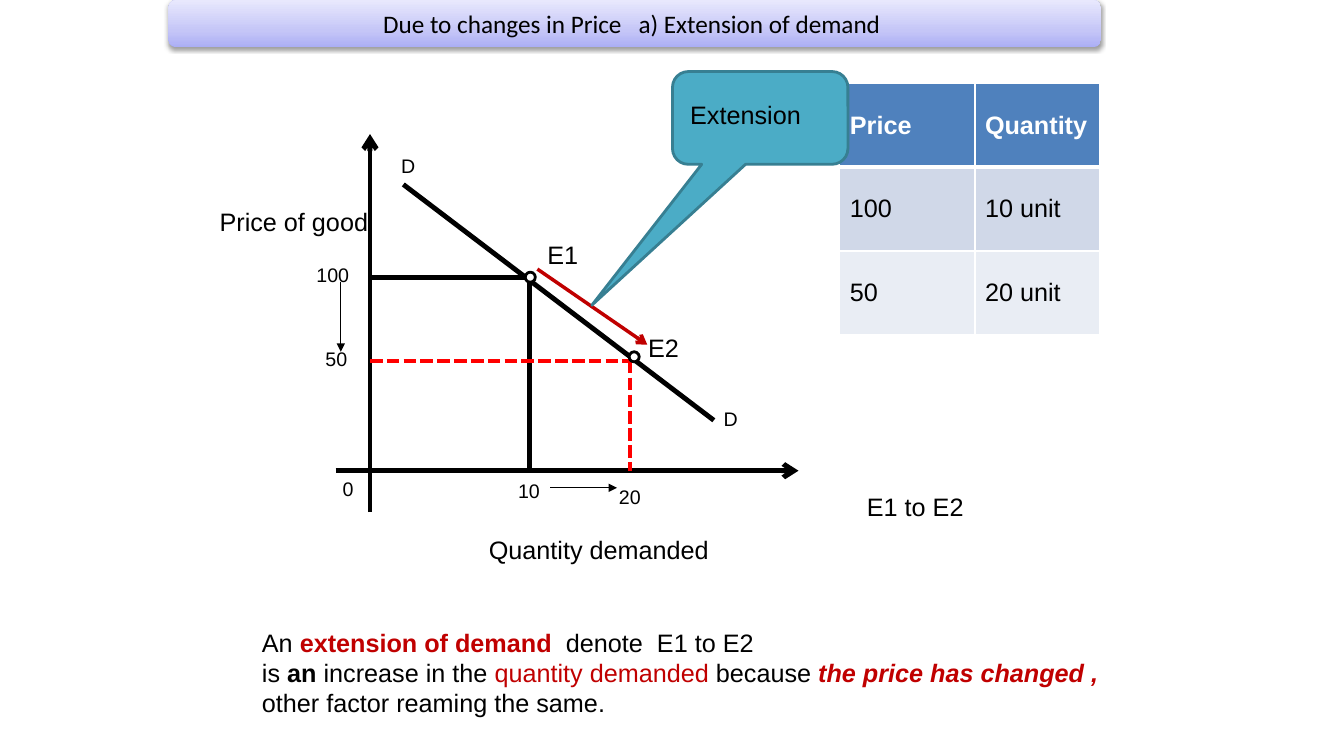
from copy import deepcopy

from lxml import etree
from pptx import Presentation
from pptx.dml.color import RGBColor
from pptx.enum.dml import MSO_LINE
from pptx.enum.shapes import MSO_CONNECTOR, MSO_SHAPE
from pptx.enum.text import MSO_ANCHOR, PP_ALIGN
from pptx.oxml.ns import qn
from pptx.util import Emu, Pt

STRAIGHT = MSO_CONNECTOR.STRAIGHT
ROUNDED = MSO_SHAPE.ROUNDED_RECTANGLE
CALLOUT = MSO_SHAPE.ROUNDED_RECTANGULAR_CALLOUT
OVAL = MSO_SHAPE.OVAL
DASH = MSO_LINE.SQUARE_DOT
MIDDLE = MSO_ANCHOR.MIDDLE
LEFT, CENTER = PP_ALIGN.LEFT, PP_ALIGN.CENTER

EMU_PER_PX = 9144
COLORS = {
    "black": "000000", "white": "FFFFFF", "crimson": "C00000", "red": "FF0000",
    "teal": "4BACC6", "teal_edge": "377F92", "header": "4F81BD",
    "band_dark": "D0D8E8", "band_light": "E9EDF4",
    "bar_dark": "ABAEF5", "bar_mid": "C5C6F7", "bar_light": "E8E8FD",
}


def px(value):
    """Turn px into EMU."""
    return Emu(round(value * EMU_PER_PX))


def rgb(name):
    """Look up a named colour."""
    return RGBColor.from_string(COLORS[name])


class DemandSlide:
    """Draws elements on one slide in a shared style."""

    def __init__(self, slide, font="Arial", size=18):
        """Keep the slide and its default font."""
        self.slide, self.font, self.size = slide, font, size

    def style(self, paragraph, size=None, color="black", font=None):
        """Set the font of a paragraph."""
        paragraph.font.name = font or self.font
        paragraph.font.size = Pt(size or self.size)
        paragraph.font.color.rgb = rgb(color)

    def text(self, box, paragraphs, size=None):
        """Add a text box; each paragraph is a list of (text, color, bold, italic)."""
        frame = self.slide.shapes.add_textbox(*map(px, box)).text_frame
        frame.word_wrap = True
        for index, runs in enumerate(paragraphs):
            paragraph = frame.add_paragraph() if index else frame.paragraphs[0]
            self.style(paragraph, size)
            for words, color, bold, italic in runs:
                run = paragraph.add_run()
                run.text = words
                if color != "black":
                    run.font.color.rgb = rgb(color)
                if bold:
                    run.font.bold = True
                if italic:
                    run.font.italic = True

    def label(self, box, words, size=None):
        """Add a plain one-run text box."""
        self.text(box, [[(words, "black", False, False)]], size)

    def line(self, start, end, width, color="black", dash=None, arrow=None):
        """Add a straight line, dashed or with an arrowhead if asked."""
        connector = self.slide.shapes.add_connector(STRAIGHT, *map(px, start + end))
        connector.line.color.rgb = rgb(color)
        connector.line.width = Pt(width)
        if dash:
            connector.line.dash_style = dash
        properties = connector.element.spPr
        if arrow:
            etree.SubElement(properties.find(qn("a:ln")), qn("a:tailEnd"), type=arrow)
        etree.SubElement(properties, qn("a:effectLst"))

    def shape(self, kind, box, fill=None, edge=None, adjustments=()):
        """Add a preset shape without a shadow."""
        shape = self.slide.shapes.add_shape(kind, *map(px, box))
        shape.shadow.inherit = False
        for index, value in enumerate(adjustments):
            shape.adjustments[index] = value
        if fill:
            shape.fill.solid()
            shape.fill.fore_color.rgb = rgb(fill)
        if edge:
            shape.line.color.rgb = rgb(edge)
            shape.line.width = Pt(2)
        else:
            shape.line.fill.background()
        return shape

    def caption(self, shape, words, align, font=None):
        """Write one paragraph inside a shape."""
        shape.text_frame.vertical_anchor = MIDDLE
        shape.text_frame.word_wrap = True
        paragraph = shape.text_frame.paragraphs[0]
        paragraph.text = words
        paragraph.alignment = align
        self.style(paragraph, font=font)

    def title_bar(self, box, words, stops):
        """Add the shaded title bar with a soft shadow."""
        bar = self.shape(ROUNDED, box)
        bar.fill.gradient()
        bar.fill.gradient_angle = 90
        properties = bar.element.spPr
        stop_list = properties.find(".//" + qn("a:gsLst"))
        stop_list.insert(1, deepcopy(stop_list[0]))
        for stop, (position, color) in zip(bar.fill.gradient_stops, stops):
            stop.position = position
            stop.color.rgb = rgb(color)
        shadow = etree.SubElement(
            properties.find(qn("a:effectLst")), qn("a:outerShdw"),
            blurRad="40000", dist="20000", dir="5400000", rotWithShape="0")
        shade = etree.SubElement(shadow, qn("a:srgbClr"), val=COLORS["black"])
        etree.SubElement(shade, qn("a:alpha"), val="38000")
        self.caption(bar, words, CENTER, "Calibri")

    def border(self, cell, side, width):
        """Draw one white cell border."""
        properties = cell._tc.get_or_add_tcPr()
        line = etree.SubElement(properties, qn("a:ln" + side), w=str(Pt(width)))
        fill = etree.SubElement(line, qn("a:solidFill"))
        etree.SubElement(fill, qn("a:srgbClr"), val=COLORS["white"])

    def table(self, origin, widths, row_height, rows, fills):
        """Add a table with a header row and banded body rows."""
        size = (sum(widths), row_height * len(rows))
        table = self.slide.shapes.add_table(
            len(rows), len(widths), *map(px, origin + size)).table
        for column, width in zip(table.columns, widths):
            column.width = px(width)
        for row_index, (values, fill) in enumerate(zip(rows, fills)):
            table.rows[row_index].height = px(row_height)
            header = row_index == 0
            for column_index, value in enumerate(values):
                cell = table.cell(row_index, column_index)
                for side in "LRTB":
                    thick = (row_index, side) in ((0, "B"), (1, "T"))
                    self.border(cell, side, 3 if thick else 1)
                cell.fill.solid()
                cell.fill.fore_color.rgb = rgb(fill)
                cell.vertical_anchor = MIDDLE
                paragraph = cell.text_frame.paragraphs[0]
                paragraph.text = value
                self.style(paragraph, color="white" if header else "black")
                paragraph.font.bold = header


def main():
    """Build the extension of demand slide."""
    presentation = Presentation()
    presentation.slide_width, presentation.slide_height = px(1333), px(750)
    page = DemandSlide(presentation.slides.add_slide(presentation.slide_layouts[6]))

    page.table((833, 83), (134, 124), 83,
               [("Price", "Quantity"), ("100", "10 unit"), ("50", "20 unit")],
               ("header", "band_dark", "band_light"))

    axis_x, axis_y = 367, 467
    page.line((533, 267), (642, 342), 2.5, "crimson", arrow="arrow")
    page.line((axis_x, 508), (axis_x, 133), 3.5, arrow="arrow")
    page.line((333, axis_y), (792, axis_y), 3.5, arrow="arrow")
    page.line((400, 183), (708, 417), 3.5)
    for x, y, width, color, dash in ((525, 275, 3.5, "black", None),
                                     (625, 358, 3, "red", DASH)):
        page.line((axis_x, y), (x, y), width, color, dash)
        page.line((x, y), (x, axis_y), width, color, dash)
    page.line((546, 484), (612, 484), 0.75, arrow="triangle")
    page.line((338, 280), (338, 349), 0.75, arrow="triangle")

    for words, box in (("Quantity demanded", (475, 525, 242, 40)),
                       ("Price of good", (208, 200, 167, 71)),
                       ("E1", (533, 233, 67, 40)),
                       ("E2", (633, 325, 67, 40)),
                       ("E1 to E2", (850, 483, 150, 40))):
        page.label(box, words)
    for words, x, y in (("100", 304, 256), ("50", 313, 339), ("10", 504, 470),
                        ("20", 604, 476), ("0", 330, 468),
                        ("D", 388, 148), ("D", 708, 399)):
        page.label((x, y, 67, 33), words, 14)

    page.text((250, 617, 867, 101), [
        [("An ", "black", False, False),
         ("extension of demand  ", "crimson", True, False),
         ("denote  E1 to E2", "black", False, False)],
        [("is ", "black", False, False),
         ("an", "black", True, False),
         (" increase in the ", "black", False, False),
         ("quantity demanded ", "crimson", False, False),
         ("because ", "black", False, False),
         ("the price has changed , ", "crimson", True, True),
         ("other factor reaming the same.", "black", False, False)],
    ])

    page.title_bar((167, 0, 925, 47), "Due to changes in Price   a) Extension of demand ",
                   ((0, "bar_dark"), (0.35, "bar_mid"), (1, "bar_light")))
    for x, y in ((521, 270), (624, 349)):
        page.shape(OVAL, (x, y, 10, 10), "white", "black")

    callout = page.shape(CALLOUT, (667, 71, 174, 92), "teal", "teal_edge",
                         (-0.96, 2.02, 0.17))
    callout.text_frame.margin_left = px(13)
    callout.text_frame.margin_bottom = px(11)
    page.caption(callout, "Extension", LEFT)

    presentation.save("out.pptx")


if __name__ == "__main__":
    main()
